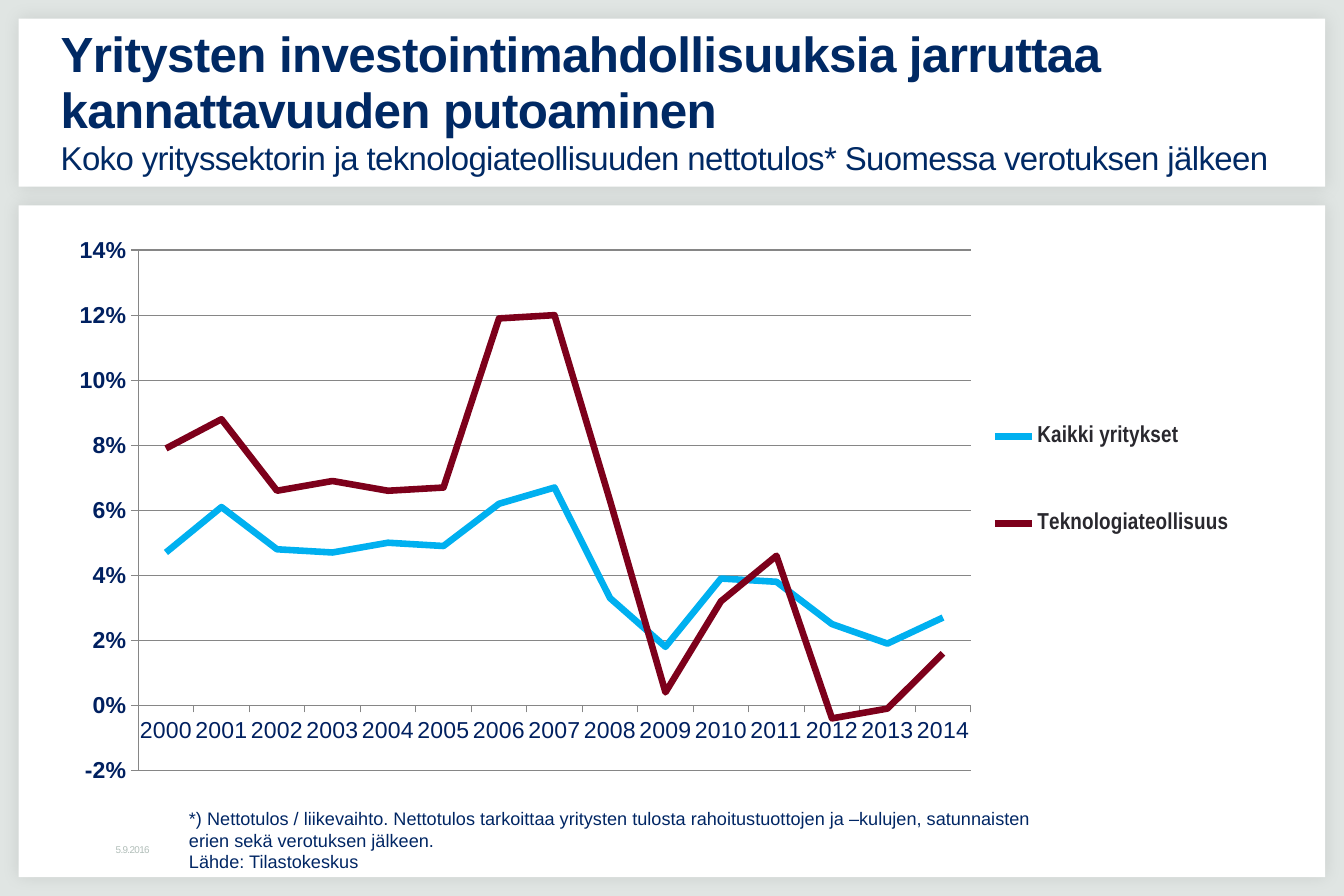
"""Build a slide on the profitability of Finnish companies and the technology industry."""
from dataclasses import dataclass

import lxml.etree
import pptx
import pptx.chart.data
import pptx.dml.color
import pptx.enum.chart
import pptx.enum.shapes
import pptx.enum.text
import pptx.oxml
import pptx.oxml.ns
import pptx.util
from pptx.util import Cm


@dataclass(frozen=True)
class Theme:
    """Colours, fonts and type sizes of the slide."""
    backdrop: str = "E0E5E3"
    panel: str = "FFFFFF"
    title: str = "002964"
    axis: str = "002060"
    grid: str = "868686"
    legend: str = "29282E"
    note: str = "002664"
    date: str = "B1BEB9"
    font: str = "Arial"
    legend_font: str = "Arial Narrow"
    title_size: float = 30
    subtitle_size: float = 20
    chart_size: float = 14
    note_size: float = 11
    date_size: float = 6


@dataclass(frozen=True)
class Box:
    """Position and size in centimetres."""
    left: float
    top: float
    width: float
    height: float

    def lengths(self) -> tuple:
        """Return the four lengths for python-pptx."""
        return Cm(self.left), Cm(self.top), Cm(self.width), Cm(self.height)


@dataclass(frozen=True)
class Series:
    """One line of the chart, with values in percent."""
    name: str
    color: str
    percents: tuple[float, ...]


THEME = Theme()
PANELS = (Box(0.4, 0.4, 28, 3.6), Box(0.4, 4.4, 28, 14.4))
YEARS = [str(year) for year in range(2000, 2015)]
SERIES = (
    Series("Kaikki yritykset", "00B0F0",
           (4.7, 6.1, 4.8, 4.7, 5.0, 4.9, 6.2, 6.7, 3.3, 1.8, 3.9, 3.8, 2.5, 1.9, 2.7)),
    Series("Teknologiateollisuus", "7D001B",
           (7.9, 8.8, 6.6, 6.9, 6.6, 6.7, 11.9, 12.0, 6.3, 0.4, 3.2, 4.6, -0.4, -0.1, 1.6)),
)
NOTES = (
    "*) Nettotulos / liikevaihto. Nettotulos tarkoittaa yritysten tulosta rahoitustuottojen "
    "ja –kulujen, satunnaisten erien sekä verotuksen jälkeen.",
    "Lähde: Tilastokeskus",
)


def rgb(color: str) -> pptx.dml.color.RGBColor:
    """Turn a hex string into a colour."""
    return pptx.dml.color.RGBColor.from_string(color)


def style_font(font, size: float, color: str, bold: bool = False, name: str = THEME.font) -> None:
    """Apply size, colour, weight and typeface."""
    font.size = pptx.util.Pt(size)
    font.color.rgb = rgb(color)
    font.bold = bold
    font.name = name


def add_run(paragraph, text: str, size: float, color: str,
            bold: bool = False, tight: bool = False) -> None:
    """Add a formatted run, optionally with tighter letter spacing."""
    run = paragraph.add_run()
    run.text = text
    style_font(run.font, size, color, bold)
    if tight:
        run.font._element.set("spc", "-40")


def set_frame(frame, anchor, left: float, top: float, right: float, bottom: float) -> None:
    """Set wrapping, anchor and margins in centimetres."""
    frame.word_wrap = True
    frame.auto_size = pptx.enum.text.MSO_AUTO_SIZE.NONE
    frame.vertical_anchor = anchor
    frame.margin_left, frame.margin_top = Cm(left), Cm(top)
    frame.margin_right, frame.margin_bottom = Cm(right), Cm(bottom)


def add_panel(slide, box: Box) -> None:
    """Draw a white panel with a soft shadow all round."""
    panel = slide.shapes.add_shape(pptx.enum.shapes.MSO_SHAPE.RECTANGLE, *box.lengths())
    panel.fill.solid()
    panel.fill.fore_color.rgb = rgb(THEME.panel)
    panel.line.fill.background()
    panel.shadow.inherit = False
    effects = panel._element.spPr.find(pptx.oxml.ns.qn("a:effectLst"))
    effects.append(pptx.oxml.parse_xml(
        f'<a:outerShdw {pptx.oxml.ns.nsdecls("a")} blurRad="127000" dist="0" algn="ctr" '
        'rotWithShape="0"><a:srgbClr val="000000"><a:alpha val="10000"/></a:srgbClr>'
        '</a:outerShdw>'))


def add_title(slide) -> None:
    """Place the two-part title above its panel."""
    title = slide.shapes.title
    title._element.getparent().append(title._element)
    title.left, title.top, title.width, title.height = Box(1.2, 0.8, 27.2, 2.8).lengths()
    set_frame(title.text_frame, pptx.enum.text.MSO_ANCHOR.MIDDLE, 0.1, 0.13, 0.25, 0.13)
    heading = title.text_frame.paragraphs[0]
    heading.alignment = pptx.enum.text.PP_ALIGN.LEFT
    heading.line_spacing = 0.95
    add_run(heading, "Yritysten investointimahdollisuuksia jarruttaa kannattavuuden putoaminen",
            THEME.title_size, THEME.title, bold=True, tight=True)
    heading.add_line_break()
    add_run(heading, "Koko yrityssektorin ja teknologiateollisuuden nettotulos* Suomessa "
            "verotuksen jälkeen", THEME.subtitle_size, THEME.title, tight=True)


def set_layout(part, index: int, box: Box, inner: bool = False) -> None:
    """Give a chart part a manual layout in fractions of the chart."""
    for old in part.findall(pptx.oxml.ns.qn("c:layout")):
        part.remove(old)
    layout = lxml.etree.Element(pptx.oxml.ns.qn("c:layout"))
    manual = lxml.etree.SubElement(layout, pptx.oxml.ns.qn("c:manualLayout"))
    settings = [("layoutTarget", "inner")] if inner else []
    settings += [("xMode", "edge"), ("yMode", "edge"), ("x", box.left), ("y", box.top),
                 ("w", box.width), ("h", box.height)]
    for tag, value in settings:
        lxml.etree.SubElement(manual, pptx.oxml.ns.qn(f"c:{tag}")).set("val", str(value))
    part.insert(index, layout)


def add_profit_chart(slide) -> None:
    """Draw the line chart of net result by year."""
    profit = pptx.chart.data.CategoryChartData(number_format="0.0%")
    profit.categories = YEARS
    for series in SERIES:
        profit.add_series(series.name, [round(p / 100, 3) for p in series.percents])
    chart = slide.shapes.add_chart(pptx.enum.chart.XL_CHART_TYPE.LINE,
                                   *Box(1.4, 4.8, 25.2, 12.2).lengths(), profit).chart
    chart.has_title = False
    style_font(chart.font, THEME.chart_size, THEME.legend)
    chart.plots[0].vary_by_categories = False
    for line, series in zip(chart.plots[0].series, SERIES):
        line.smooth = False
        line.marker.style = pptx.enum.chart.XL_MARKER_STYLE.NONE
        line.format.line.color.rgb = rgb(series.color)
        line.format.line.width = pptx.util.Pt(4)

    years, share = chart.category_axis, chart.value_axis
    for axis, bold in ((years, False), (share, True)):
        style_font(axis.tick_labels.font, THEME.chart_size, THEME.axis, bold)
        axis.major_tick_mark = pptx.enum.chart.XL_TICK_MARK.OUTSIDE
        axis.format.line.color.rgb = rgb(THEME.grid)
    share.minimum_scale, share.maximum_scale, share.major_unit = -0.02, 0.14, 0.02
    share.tick_labels.number_format = "0%"
    share.tick_labels.number_format_is_linked = False
    share.major_gridlines.format.line.color.rgb = rgb(THEME.grid)

    chart.has_legend = True
    chart.legend.position = pptx.enum.chart.XL_LEGEND_POSITION.RIGHT
    chart.legend.include_in_layout = False
    style_font(chart.legend.font, THEME.chart_size, THEME.legend, True, THEME.legend_font)
    set_layout(chart.legend._element, 1, Box(0.78, 0.24, 0.22, 0.42))
    plot_area = chart._chartSpace.find(".//" + pptx.oxml.ns.qn("c:plotArea"))
    set_layout(plot_area, 0, Box(0.062, 0.046, 0.708, 0.914), inner=True)


def add_notes_and_date(slide) -> None:
    """Write the footnote, the source and the date."""
    notes = slide.shapes.add_textbox(*Box(3.8, 17.17, 18.95, 1.68).lengths()).text_frame
    set_frame(notes, pptx.enum.text.MSO_ANCHOR.TOP, 0.25, 0.13, 0.25, 0.13)
    for index, text in enumerate(NOTES):
        paragraph = notes.add_paragraph() if index else notes.paragraphs[0]
        add_run(paragraph, text, THEME.note_size, THEME.note)
    date = slide.shapes.add_textbox(*Box(2.38, 18, 3.6, 0.4).lengths()).text_frame
    set_frame(date, pptx.enum.text.MSO_ANCHOR.MIDDLE, 0.1, 0.1, 0.1, 0.1)
    add_run(date.paragraphs[0], "5.9.2016", THEME.date_size, THEME.date, tight=True)


def main() -> None:
    """Assemble and save the slide."""
    deck = pptx.Presentation()
    deck.slide_width, deck.slide_height = Cm(28.8), Cm(19.2)
    slide = deck.slides.add_slide(deck.slide_layouts.get_by_name("Title Only"))
    slide.background.fill.solid()
    slide.background.fill.fore_color.rgb = rgb(THEME.backdrop)
    for box in PANELS:
        add_panel(slide, box)
    add_title(slide)
    add_profit_chart(slide)
    add_notes_and_date(slide)
    deck.save("out.pptx")


if __name__ == "__main__":
    main()
